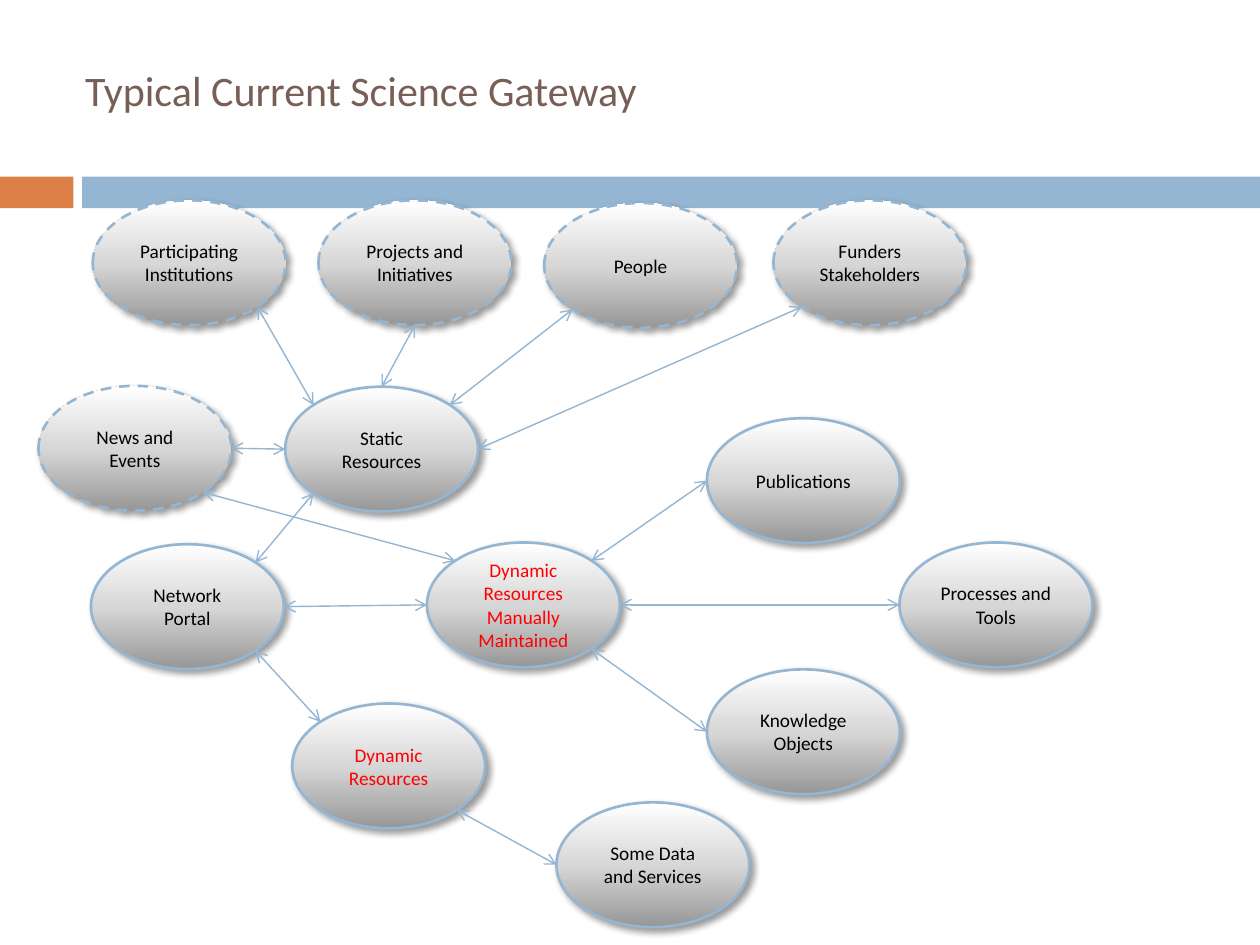
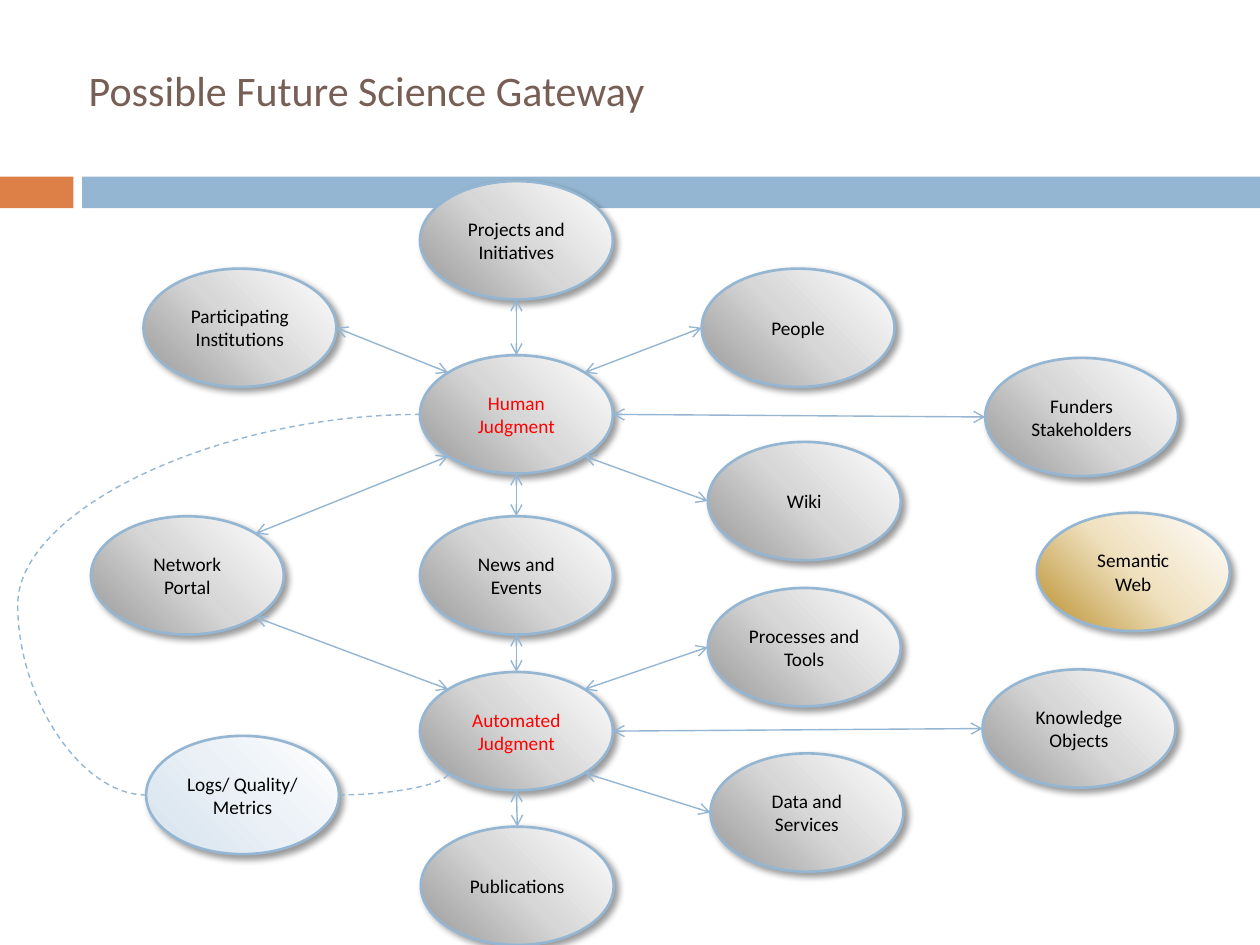
from copy import deepcopy
from math import cos, radians, sin

from lxml.etree import SubElement
from pptx import Presentation
from pptx.dml.color import RGBColor
from pptx.enum.dml import MSO_LINE
from pptx.enum.shapes import MSO_CONNECTOR, MSO_SHAPE
from pptx.enum.text import MSO_ANCHOR, PP_ALIGN
from pptx.oxml.ns import qn
from pptx.util import Pt

FONT = "Calibri"
COLORS = {
    "title": "775F55",
    "accent": "DD8047",
    "line": "94B6D2",
    "text": "000000",
    "emphasis": "FF0000",
    "shadow": "000000",
}
GRADIENTS = {
    "gray": ("979797", "D7D7D7", "FFFFFF"),
    "blue": ("D4E2ED", "EAF0F6", "FFFFFF"),
    "gold": ("BA8F2D", "EFE0BE", "FFFFFF"),
}
# node style: gradient, text colour, dashed outline
STYLES = {
    "plain": ("gray", "text", False),
    "external": ("gray", "text", True),
    "key": ("gray", "emphasis", False),
    "metrics": ("blue", "text", False),
    "semantic": ("gold", "text", False),
}
BANDS = [("accent", 0, 42), ("line", 47, 673)]
BAND_TOP, BAND_HEIGHT = 101, 18
NODE_WIDTH = 110.2
# connection sites of an ellipse, counterclockwise from the top
SITES = ["N", "NW", "W", "SW", "S", "SE", "E", "NE"]

# nodes: name -> (label, left, top, style)
# links: (from node, site, to node, site)
# curves: link, connector preset, bend adjustment
SLIDES = [
    {
        "title": "Typical Current Science Gateway",
        "title_left": 41.5,
        "node_height": 71.3,
        "gradient_angle": 90,
        "nodes": {
            "portal": ("Network Portal", 52, 311, "plain"),
            "static": ("Static Resources", 163, 221, "plain"),
            "dynamic": ("Dynamic Resources", 167, 402, "key"),
            "manual": ("Dynamic Resources\nManually Maintained", 244, 310, "key"),
            "data": ("Some Data and Services", 318, 458.5, "plain"),
            "publications": ("Publications", 404, 239, "plain"),
            "tools": ("Processes and Tools", 514, 310, "plain"),
            "knowledge": ("Knowledge Objects", 404, 382.5, "plain"),
            "institutions": ("Participating Institutions", 53, 114.5, "external"),
            "projects": ("Projects and Initiatives", 182, 114.5, "external"),
            "people": ("People", 311, 116, "external"),
            "funders": ("Funders\nStakeholders", 442, 114.5, "external"),
            "news": ("News and Events", 22, 220.5, "external"),
        },
        "links": [
            ("static", "SW", "portal", "NE"),
            ("portal", "SE", "dynamic", "NW"),
            ("portal", "E", "manual", "W"),
            ("dynamic", "SE", "data", "W"),
            ("manual", "NE", "publications", "W"),
            ("manual", "E", "tools", "W"),
            ("manual", "SE", "knowledge", "W"),
            ("static", "NW", "institutions", "SE"),
            ("static", "N", "projects", "S"),
            ("static", "NE", "people", "SW"),
            ("static", "E", "funders", "SW"),
            ("news", "E", "static", "W"),
            ("news", "SE", "manual", "NW"),
        ],
        "curves": [],
    },
    {
        "title": "Possible Future Science Gateway",
        "title_left": 43.5,
        "node_height": 67.6,
        "gradient_angle": 45,
        "nodes": {
            "portal": ("Network Portal", 52, 295, "plain"),
            "automated": ("Automated\nJudgment", 240, 384, "key"),
            "human": ("Human Judgment", 240, 203, "key"),
            "data": ("Data and Services", 406, 430.5, "plain"),
            "wiki": ("Wiki", 404.5, 252.5, "plain"),
            "tools": ("Processes and Tools", 404.5, 336, "plain"),
            "knowledge": ("Knowledge Objects", 561.5, 382.5, "plain"),
            "institutions": ("Participating Institutions", 82, 153.5, "plain"),
            "projects": ("Projects and Initiatives", 240, 103.5, "plain"),
            "people": ("People", 401, 153.5, "plain"),
            "funders": ("Funders\nStakeholders", 563, 204.5, "plain"),
            "news": ("News and Events", 240, 295, "plain"),
            "logs": ("Logs/ Quality/\nMetrics", 83.5, 420.5, "metrics"),
            "publications": ("Publications", 240.5, 472.4, "plain"),
            "semantic": ("Semantic Web", 592.5, 293, "semantic"),
        },
        "links": [
            ("portal", "SE", "automated", "NW"),
            ("portal", "NE", "human", "SW"),
            ("automated", "SE", "data", "W"),
            ("human", "SE", "wiki", "W"),
            ("automated", "NE", "tools", "W"),
            ("automated", "E", "knowledge", "W"),
            ("human", "NW", "institutions", "E"),
            ("human", "N", "projects", "S"),
            ("human", "NE", "people", "SW"[1:]),
            ("human", "E", "funders", "W"),
            ("news", "S", "automated", "N"),
            ("human", "S", "news", "N"),
            ("automated", "S", "publications", "N"),
        ],
        "curves": [
            (("logs", "E", "automated", "SW"), "curvedConnector2", None),
            (("logs", "W", "human", "W"), "curvedConnector3", -46900),
        ],
    },
]


def rgb(name):
    return RGBColor.from_string(COLORS[name])


def add_bands(slide):
    for color, left, width in BANDS:
        band = slide.shapes.add_shape(
            MSO_SHAPE.RECTANGLE, Pt(left), Pt(BAND_TOP), Pt(width), Pt(BAND_HEIGHT))
        band.shadow.inherit = False
        band.fill.solid()
        band.fill.fore_color.rgb = rgb(color)
        band.line.fill.background()


def set_title(slide, text, left):
    title = slide.shapes.title
    title.left, title.top, title.width, title.height = Pt(left), Pt(15), Pt(648), Pt(72)
    title.text_frame.text = text
    title.text_frame.vertical_anchor = MSO_ANCHOR.MIDDLE
    paragraph = title.text_frame.paragraphs[0]
    paragraph.alignment = PP_ALIGN.LEFT
    paragraph.font.name, paragraph.font.size = FONT, Pt(24)
    paragraph.font.color.rgb = rgb("title")


def fill_gradient(shape, colors, angle):
    shape.fill.gradient()
    shape.fill.gradient_angle = angle
    stop_list = shape.element.spPr.find(".//" + qn("a:gsLst"))
    stop_list.insert(1, deepcopy(stop_list[0]))
    for index, (stop, color) in enumerate(zip(shape.fill.gradient_stops, colors)):
        stop.position = index / 2
        stop.color.rgb = RGBColor.from_string(color)


def add_shadow(shape):
    shape.shadow.inherit = False
    effects = shape.element.spPr.find(qn("a:effectLst"))
    shadow = SubElement(effects, qn("a:outerShdw"), blurRad=str(Pt(4)), dist=str(Pt(3)),
                        dir="2700000", algn="tl", rotWithShape="0")
    color = SubElement(shadow, qn("a:srgbClr"), val=COLORS["shadow"])
    SubElement(color, qn("a:alpha"), val="40000")


def add_node(slide, label, left, top, height, style, angle):
    gradient, text_color, dashed = STYLES[style]
    node = slide.shapes.add_shape(
        MSO_SHAPE.OVAL, Pt(left), Pt(top), Pt(NODE_WIDTH), Pt(height))
    fill_gradient(node, GRADIENTS[gradient], angle)
    node.line.color.rgb = rgb("line")
    node.line.width = Pt(1.5)
    if dashed:
        node.line.dash_style = MSO_LINE.DASH
    add_shadow(node)
    frame = node.text_frame
    frame.word_wrap = True
    frame.vertical_anchor = MSO_ANCHOR.MIDDLE
    frame.text = label
    for paragraph in frame.paragraphs:
        paragraph.alignment = PP_ALIGN.CENTER
        paragraph.font.name, paragraph.font.size = FONT, Pt(11)
        paragraph.font.color.rgb = rgb(text_color)
    return node


def site_point(node, site):
    angle = radians(45 * SITES.index(site))
    return (round(node.left + node.width / 2 * (1 - sin(angle))),
            round(node.top + node.height / 2 * (1 - cos(angle))))


def add_link(slide, nodes, link, kind=MSO_CONNECTOR.STRAIGHT):
    """Join two ellipses at named sites; python-pptx itself only knows sites 0 to 3."""
    ends = [(nodes[link[0]], link[1]), (nodes[link[2]], link[3])]
    (begin_x, begin_y), (end_x, end_y) = [site_point(*end) for end in ends]
    connector = slide.shapes.add_connector(kind, begin_x, begin_y, end_x, end_y)
    connector.line.color.rgb = rgb("line")
    connector.line.width = Pt(0.79)
    SubElement(connector.element.spPr, qn("a:effectLst"))
    joints = connector.element.find(".//" + qn("p:cNvCxnSpPr"))
    for tag, (node, site) in zip(("a:stCxn", "a:endCxn"), ends):
        SubElement(joints, qn(tag), id=str(node.shape_id), idx=str(SITES.index(site)))
    return connector


def add_arrow(slide, nodes, link):
    line = add_link(slide, nodes, link).element.spPr.find(qn("a:ln"))
    for tag in ("a:headEnd", "a:tailEnd"):
        SubElement(line, qn(tag), type="arrow")


def add_curve(slide, nodes, link, preset, bend):
    curve = add_link(slide, nodes, link, MSO_CONNECTOR.CURVE)
    curve.line.dash_style = MSO_LINE.DASH
    geometry = curve.element.spPr.find(qn("a:prstGeom"))
    geometry.set("prst", preset)
    if bend is not None:
        SubElement(geometry.find(qn("a:avLst")), qn("a:gd"), name="adj1", fmla=f"val {bend}")


def add_gateway_slide(presentation, content):
    slide = presentation.slides.add_slide(presentation.slide_layouts[5])
    add_bands(slide)
    set_title(slide, content["title"], content["title_left"])
    nodes = {
        name: add_node(slide, label, left, top, content["node_height"], style,
                       content["gradient_angle"])
        for name, (label, left, top, style) in content["nodes"].items()
    }
    for link in content["links"]:
        add_arrow(slide, nodes, link)
    for link, preset, bend in content["curves"]:
        add_curve(slide, nodes, link, preset, bend)


def main():
    presentation = Presentation()
    presentation.slide_width, presentation.slide_height = Pt(720), Pt(540)
    for content in SLIDES:
        add_gateway_slide(presentation, content)
    presentation.save("out.pptx")


if __name__ == "__main__":
    main()
